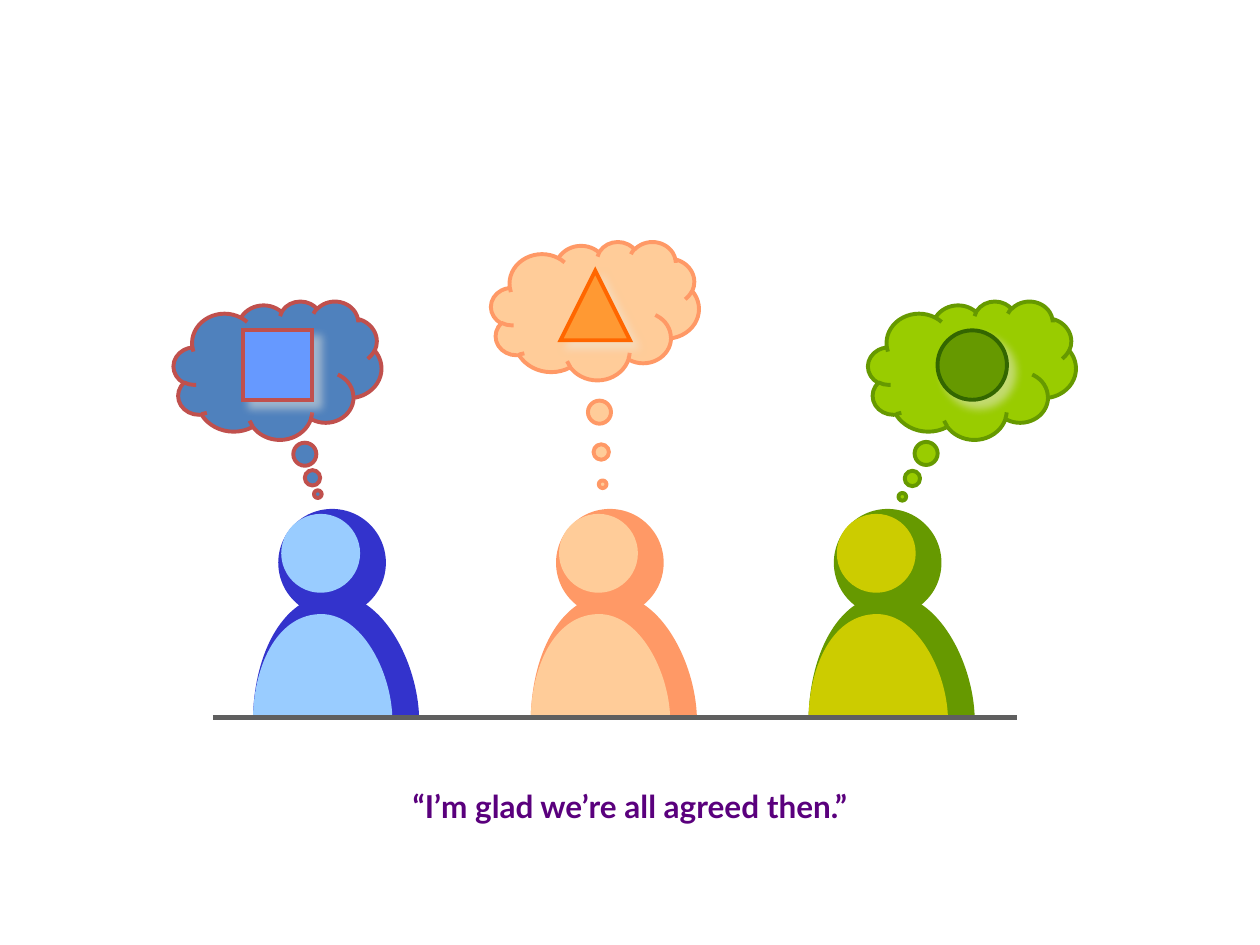
from dataclasses import dataclass

from lxml.etree import SubElement
from pptx import Presentation
from pptx.dml.color import RGBColor
from pptx.enum.shapes import MSO_CONNECTOR, MSO_SHAPE
from pptx.enum.text import MSO_ANCHOR, PP_ALIGN
from pptx.oxml.ns import qn
from pptx.util import Cm, Pt


@dataclass(frozen=True)
class Thinker:
    """Position, thought and colours of one person."""
    left: float
    cloud_at: tuple
    tail: tuple
    icon: MSO_SHAPE
    back: str
    front: str
    cloud_fill: str
    cloud_line: str
    icon_fill: str
    icon_line: str


class Theme:
    """Colours, font and sizes of the slide."""
    font = "Lato"
    caption_size = Pt(18)
    caption = "5A007D"
    table = "5F5F5F"
    table_width = Pt(3)
    outline_width = Pt(2.25)
    shadow = "EEECE1"
    thinkers = (
        Thinker(5.1, (3.5, 6.07), (0.194, 0.895), MSO_SHAPE.RECTANGLE,
                "3333CC", "99CCFF", "4F81BD", "C0504D", "6699FF", "C0504D"),
        Thinker(10.7, (9.9, 4.87), (0.037, 1.254), MSO_SHAPE.ISOSCELES_TRIANGLE,
                "FF9966", "FFCC99", "FFCC99", "FF9966", "FF9933", "FF6600"),
        Thinker(16.3, (17.5, 6.07), (-0.335, 0.914), MSO_SHAPE.OVAL,
                "669900", "CCCC00", "99CC00", "669900", "669900", "336600"),
    )


TABLE_TOP = 14.46
BODY_START = (0, 1)
BODY_CURVES = (
    (0, 1), (0.5, 1), (1, 1),
    (0.99, 0.55), (0.78, 0), (0.49, 0),
    (0.19, 0), (0.01, 0.46), (0, 1),
)


def paint(sp, fill, line=None):
    """Set a flat fill and an optional outline."""
    sp.shadow.inherit = False
    sp.fill.solid()
    sp.fill.fore_color.rgb = RGBColor.from_string(fill)
    if line is None:
        sp.line.fill.background()
    else:
        sp.line.color.rgb = RGBColor.from_string(line)
        sp.line.width = Theme.outline_width


def add_preset(shapes, kind, left, top, width, height, fill, line=None):
    """Add a painted preset shape."""
    sp = shapes.add_shape(kind, Cm(left), Cm(top), Cm(width), Cm(height))
    paint(sp, fill, line)
    return sp


def bend_segments(sp):
    """Turn each three line segments of an outline into one cubic curve."""
    segments = list(sp._element.iter(qn("a:lnTo")))
    for i in range(0, len(segments), 3):
        curve = segments[i].makeelement(qn("a:cubicBezTo"))
        segments[i].addprevious(curve)
        for segment in segments[i:i + 3]:
            curve.append(segment[0])
            segment.getparent().remove(segment)


def add_body(shapes, left, width, height, fill):
    """Add a rounded torso standing on the table."""
    top = TABLE_TOP - height
    start, *points = [(Cm(left + x * width), Cm(top + y * height))
                      for x, y in (BODY_START, *BODY_CURVES)]
    builder = shapes.build_freeform(*start)
    builder.add_line_segments(points, close=True)
    sp = builder.convert_to_shape()
    bend_segments(sp)
    paint(sp, fill)


def add_person(shapes, thinker):
    """Add a grouped head and torso, each with a lit front."""
    group = shapes.add_group_shape().shapes
    left = thinker.left
    add_preset(group, MSO_SHAPE.OVAL, left + 0.51, 10.26, 2.17, 2.17, thinker.back)
    add_preset(group, MSO_SHAPE.OVAL, left + 0.57, 10.36, 1.59, 1.59, thinker.front)
    add_body(group, left, 3.35, 2.48, thinker.back)
    add_body(group, left, 2.81, 2.08, thinker.front)


def add_soft_shadow(sp):
    """Cast a blurred shadow down and to the right."""
    effects = sp._element.spPr.find(qn("a:effectLst"))
    shadow = SubElement(effects, qn("a:outerShdw"), blurRad=str(Pt(5)),
                        dist=str(Pt(5.7)), dir="2700000", algn="tl", rotWithShape="0")
    color = SubElement(shadow, qn("a:srgbClr"), val=Theme.shadow)
    SubElement(color, qn("a:alpha"), val="50000")


def add_thought(shapes, thinker):
    """Add a thought cloud with its sharp-cornered icon."""
    left, top = thinker.cloud_at
    cloud = add_preset(shapes, MSO_SHAPE.CLOUD_CALLOUT, left, top, 4.19, 2.79,
                       thinker.cloud_fill, thinker.cloud_line)
    for i, value in enumerate(thinker.tail):
        cloud.adjustments[i] = value
    icon = add_preset(shapes, thinker.icon, left + 1.4, top + 0.59, 1.4, 1.4,
                      thinker.icon_fill, thinker.icon_line)
    SubElement(icon._element.spPr.find(qn("a:ln")), qn("a:miter"), lim="800000")
    add_soft_shadow(icon)


def add_table_edge(shapes):
    """Add the line that the people sit behind."""
    edge = shapes.add_connector(MSO_CONNECTOR.STRAIGHT, Cm(4.29), Cm(TABLE_TOP),
                                Cm(20.5), Cm(TABLE_TOP))
    edge.line.color.rgb = RGBColor.from_string(Theme.table)
    edge.line.width = Theme.table_width
    SubElement(edge._element.spPr, qn("a:effectLst"))


def add_caption(shapes, text):
    """Add the centred caption."""
    tf = shapes.add_textbox(Cm(7.24), Cm(15.73), Cm(10.92), Cm(1.03)).text_frame
    tf.word_wrap = True
    tf.vertical_anchor = MSO_ANCHOR.BOTTOM
    p = tf.paragraphs[0]
    p.text = text
    p.alignment = PP_ALIGN.CENTER
    p.font.name = Theme.font
    p.font.size = Theme.caption_size
    p.font.bold = True
    p.font.color.rgb = RGBColor.from_string(Theme.caption)


def main():
    """Build and save the slide."""
    prs = Presentation()
    prs.slide_width, prs.slide_height = Cm(25.4), Cm(19.05)
    shapes = prs.slides.add_slide(prs.slide_layouts[6]).shapes
    for thinker in Theme.thinkers:
        add_person(shapes, thinker)
        add_thought(shapes, thinker)
    add_table_edge(shapes)
    add_caption(shapes, "“I’m glad we’re all agreed then.”")
    prs.save("out.pptx")


if __name__ == "__main__":
    main()
